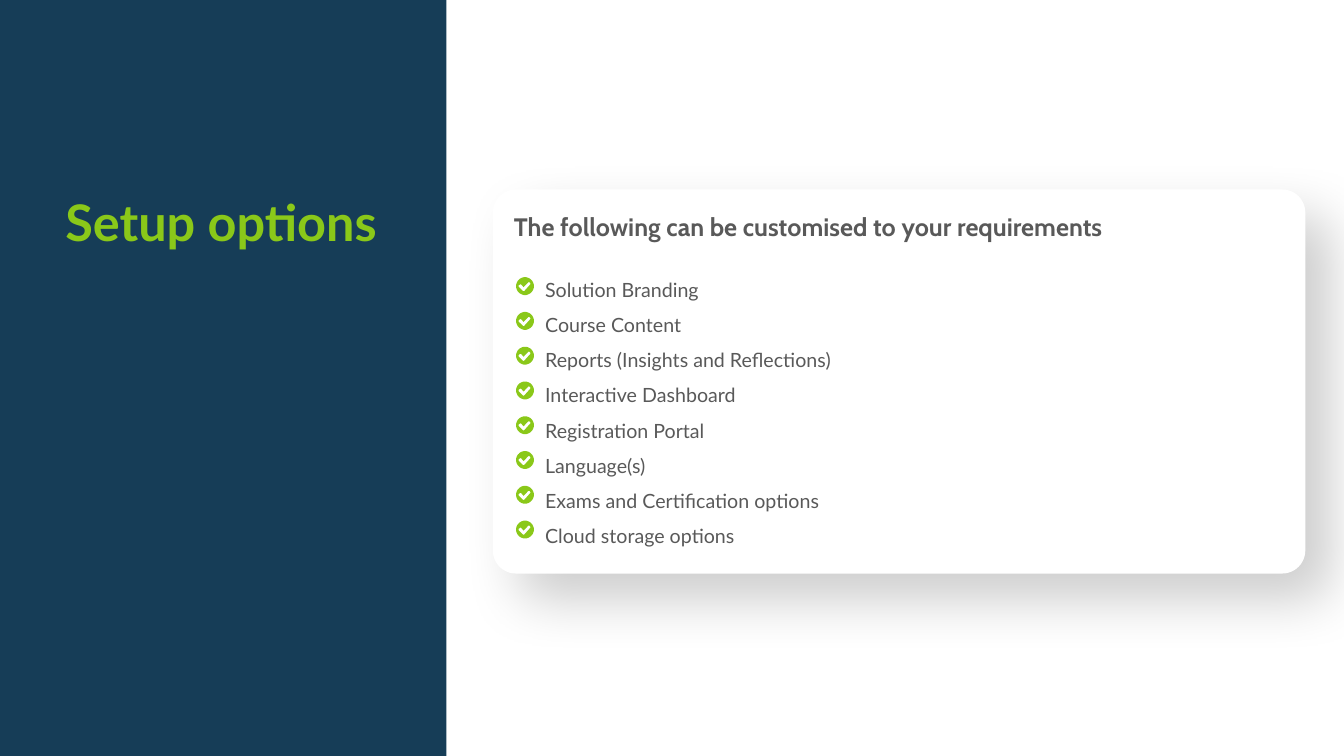
from dataclasses import dataclass
from math import cos, pi, sin

from lxml.etree import SubElement
from pptx import Presentation
from pptx.dml.color import RGBColor
from pptx.enum.shapes import MSO_SHAPE as Preset
from pptx.enum.text import MSO_AUTO_SIZE as AutoSize
from pptx.oxml.ns import qn
from pptx.shapes.autoshape import Shape
from pptx.slide import Slide
from pptx.text.text import TextFrame, _Paragraph as Paragraph
from pptx.util import Emu, Pt

COLUMNS, ROWS = 160, 90
CELL = 76200
COLOURS = {"navy": "163D57", "green": "8AC819", "grey": "595959", "white": "FFFFFF", "black": "000000"}
OPTIONS = (
    "Solution Branding",
    "Course Content",
    "Reports (Insights and Reflections)",
    "Interactive Dashboard",
    "Registration Portal",
    "Language(s)",
    "Exams and Certification options",
    "Cloud storage options",
)
CHECK_MARK = (
    (80, 34), (75, 28), (69, 28), (42, 56), (28, 40), (23, 40),
    (14, 46), (14, 54), (39, 79), (45, 79), (80, 40),
)
DISC = tuple((50 + 50 * cos(pi * step / 24), 50 + 50 * sin(pi * step / 24)) for step in range(48))


@dataclass(frozen=True)
class Area:
    column: float
    row: float
    width: float
    height: float

    def lengths(self) -> tuple[Emu, ...]:
        return tuple(cells(value) for value in (self.column, self.row, self.width, self.height))


@dataclass(frozen=True)
class TextStyle:
    font: str
    size: int
    colour: str
    bold: bool = False


PANEL = Area(0, 0, 53.16, ROWS)
TITLE = Area(6.6, 22.2, 41.4, 11.88)
CARD = Area(58.68, 22.56, 96.72, 45.72)
DETAILS = Area(60, 24.6, 88.8, 41.04)
FIRST_TICK = Area(61.44, 33, 2.12, 2.12)
TICK_STEP = 4.14
OPTION_INDENT = 3.72

TITLE_STYLE = TextStyle("Lato", 36, "green", True)
HEADING_STYLE = TextStyle("Cabin", 18, "grey", True)
OPTION_STYLE = TextStyle("Lato", 14, "grey")


def cells(count: float) -> Emu:
    return Emu(round(count * CELL))


def colour(name: str) -> RGBColor:
    return RGBColor.from_string(COLOURS[name])


def paint(shape: Shape, fill: str) -> None:
    shape.shadow.inherit = False
    shape.fill.solid()
    shape.fill.fore_color.rgb = colour(fill)
    shape.line.fill.background()


def add_block(slide: Slide, preset: Preset, area: Area, fill: str) -> Shape:
    shape = slide.shapes.add_shape(preset, *area.lengths())
    paint(shape, fill)
    return shape


def cast_shadow(shape: Shape) -> None:
    effects = shape._element.spPr.find(qn("a:effectLst"))
    shadow = SubElement(
        effects, qn("a:outerShdw"), blurRad=str(Pt(40)), dist=str(Pt(26)),
        dir=str(45 * 60000), algn="tl", rotWithShape="0",
    )
    tint = SubElement(shadow, qn("a:srgbClr"), val=COLOURS["black"])
    SubElement(tint, qn("a:alpha"), val="20000")


def add_text_frame(slide: Slide, area: Area) -> TextFrame:
    frame = slide.shapes.add_textbox(*area.lengths()).text_frame
    frame.word_wrap = True
    return frame


def add_run(paragraph: Paragraph, text: str, style: TextStyle) -> None:
    run = paragraph.add_run()
    run.text = text
    run.font.name = style.font
    run.font.size = Pt(style.size)
    run.font.bold = style.bold
    run.font.color.rgb = colour(style.colour)


def add_option(frame: TextFrame, text: str) -> Paragraph:
    paragraph = frame.add_paragraph()
    paragraph.level = 1
    paragraph.line_spacing = 1.5
    properties = paragraph._p.get_or_add_pPr()
    properties.set("marL", str(cells(OPTION_INDENT)))
    properties.set("indent", "0")
    add_run(paragraph, text, OPTION_STYLE)
    return paragraph


def add_tick(slide: Slide, area: Area) -> None:
    left, top, width, _ = area.lengths()
    builder = slide.shapes.build_freeform(*DISC[0], scale=width / 100)
    builder.add_line_segments(DISC[1:])
    builder.move_to(*CHECK_MARK[0])
    builder.add_line_segments(CHECK_MARK[1:])
    paint(builder.convert_to_shape(left, top), "green")


def main() -> None:
    """Build the setup options slide and save it."""
    presentation = Presentation()
    presentation.slide_width, presentation.slide_height = cells(COLUMNS), cells(ROWS)
    slide = presentation.slides.add_slide(presentation.slide_layouts[6])

    add_block(slide, Preset.RECTANGLE, PANEL, "navy")
    title = add_text_frame(slide, TITLE)
    add_run(title.paragraphs[0], "Setup options", TITLE_STYLE)

    card = add_block(slide, Preset.ROUNDED_RECTANGLE, CARD, "white")
    card.adjustments[0] = 0.06
    cast_shadow(card)

    details = add_text_frame(slide, DETAILS)
    details.auto_size = AutoSize.SHAPE_TO_FIT_TEXT
    heading = details.paragraphs[0]
    add_run(heading, "The following can be customised to your requirements", HEADING_STYLE)
    heading.space_after = Pt(17)

    for index, option in enumerate(OPTIONS):
        add_option(details, option)
        row = FIRST_TICK.row + index * TICK_STEP
        add_tick(slide, Area(FIRST_TICK.column, row, FIRST_TICK.width, FIRST_TICK.height))

    presentation.save("out.pptx")


if __name__ == "__main__":
    main()
